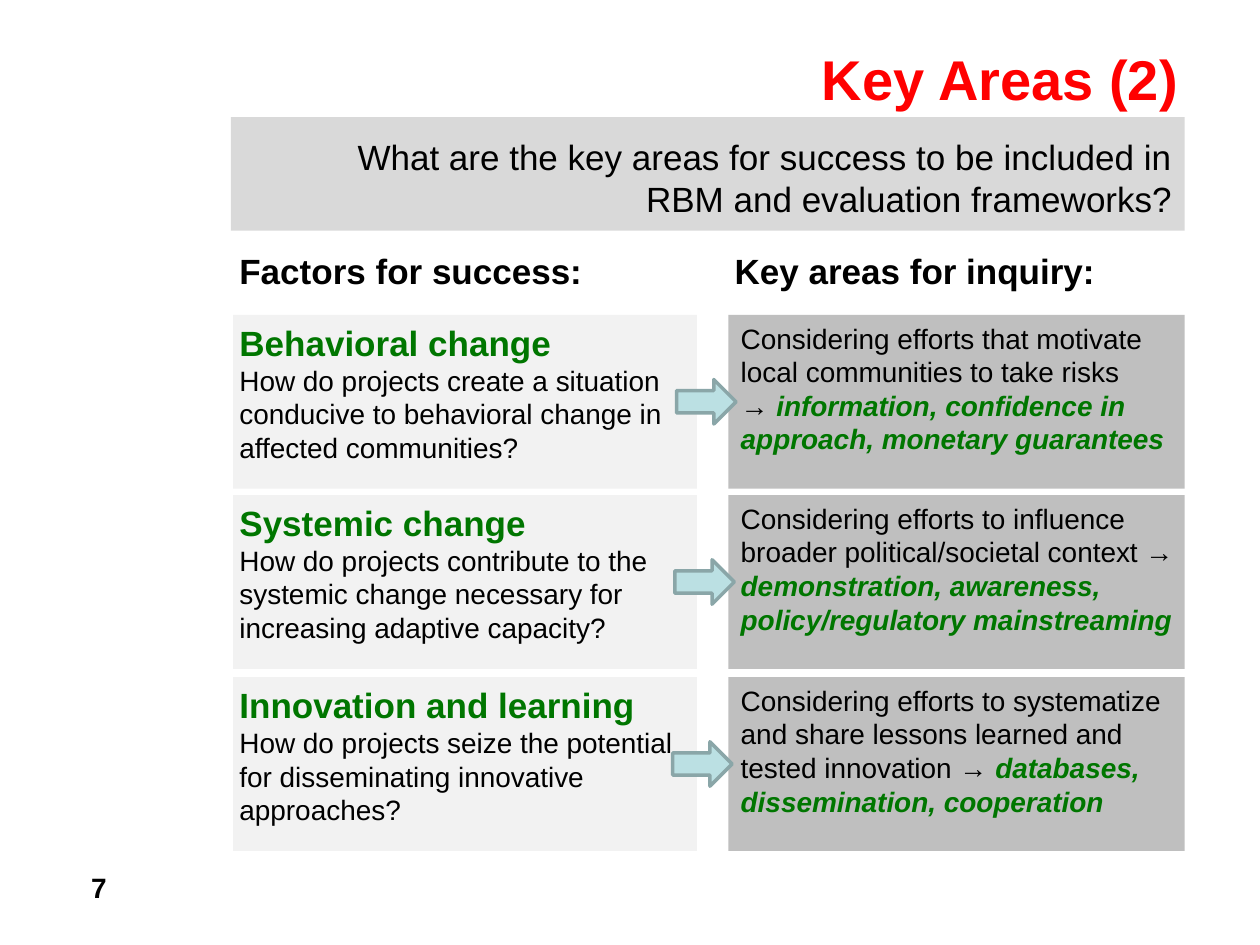
from pptx import Presentation
from pptx.dml.color import RGBColor
from pptx.enum.shapes import MSO_SHAPE
from pptx.enum.text import MSO_ANCHOR, PP_ALIGN
from pptx.util import Pt

RECTANGLE, ARROW = MSO_SHAPE.RECTANGLE, MSO_SHAPE.RIGHT_ARROW
TOP, MIDDLE = MSO_ANCHOR.TOP, MSO_ANCHOR.MIDDLE
LEFT, CENTER, RIGHT = PP_ALIGN.LEFT, PP_ALIGN.CENTER, PP_ALIGN.RIGHT

BLACK = RGBColor(0x00, 0x00, 0x00)
RED = RGBColor(0xFF, 0x00, 0x00)
GREEN = RGBColor(0x00, 0x76, 0x00)
BANNER_GRAY = RGBColor(0xD9, 0xD9, 0xD9)
FACTOR_GRAY = RGBColor(0xF2, 0xF2, 0xF2)
INQUIRY_GRAY = RGBColor(0xBF, 0xBF, 0xBF)
ARROW_FILL = RGBColor(0xBB, 0xE0, 0xE3)
ARROW_LINE = RGBColor(0x8A, 0xA6, 0xA8)

# Content
TITLE = "Key Areas (2)"
QUESTION = "What are the key areas for success to be included in RBM and evaluation frameworks?"
PAGE_NUMBER = "7"
HEADINGS = [("Factors for success:", 136.8, 260), ("Key areas for inquiry:", 419.8, 219)]

# Each row: top, arrow left, factor, question, inquiry paragraphs of (text, is highlighted)
ROWS = [
    (180, 386.6, "Behavioral change",
     "How do projects create a situation conducive to behavioral change in affected communities?",
     [[("Considering efforts that motivate local communities to take risks", False)],
      [("→ ", False), ("information, confidence in approach, monetary guarantees", True)]]),
    (283, 385.6, "Systemic change",
     "How do projects contribute to the systemic change necessary for increasing adaptive capacity?",
     [[("Considering efforts to influence broader political/societal context → ", False),
       ("demonstration, awareness, policy/regulatory mainstreaming", True)]]),
    (387, 384.4, "Innovation and learning",
     "How do projects seize the potential for disseminating innovative approaches?",
     [[("Considering efforts to systematize and share lessons learned and tested innovation → ", False),
       ("databases, dissemination, cooperation", True)]]),
]

# Layout
FACTOR_LEFT, FACTOR_WIDTH = 133.2, 265
INQUIRY_LEFT, INQUIRY_WIDTH = 416.2, 260.8
ROW_HEIGHT = 99.2
ARROW_WIDTH, ARROW_HEIGHT = 34, 25.4

deck = Presentation()
deck.slide_width, deck.slide_height = Pt(720), Pt(540)
page = deck.slides.add_slide(deck.slide_layouts[6])


def set_frame(box, insets, anchor):
    frame = box.text_frame
    frame.word_wrap = True
    frame.vertical_anchor = anchor
    (frame.margin_left, frame.margin_top,
     frame.margin_right, frame.margin_bottom) = [Pt(inset) for inset in insets]
    return frame


def add_box(left, top, width, height, insets=(7.2, 3.6, 7.2, 3.6), anchor=TOP):
    box = page.shapes.add_textbox(Pt(left), Pt(top), Pt(width), Pt(height))
    return set_frame(box, insets, anchor)


def add_shape(kind, left, top, width, height, fill):
    shape = page.shapes.add_shape(kind, Pt(left), Pt(top), Pt(width), Pt(height))
    shape.shadow.inherit = False
    shape.fill.solid()
    shape.fill.fore_color.rgb = fill
    shape.line.fill.background()
    return shape


def add_panel(left, top, width, height, fill, insets, anchor=TOP):
    return set_frame(add_shape(RECTANGLE, left, top, width, height, fill), insets, anchor)


def write(para, text, size, color=BLACK, bold=False, align=LEFT):
    para.text = text
    para.alignment = align
    font = para.font
    font.name, font.size, font.bold = "Arial", Pt(size), bold
    font.color.rgb = color


# Title, page number and banner
write(add_box(157, 16.6, 523.4, 56.2, anchor=MIDDLE).paragraphs[0],
      TITLE, 32, RED, True, RIGHT)
write(add_box(38.9, 493.9, 35.3, 28.8).paragraphs[0], PAGE_NUMBER, 16, bold=True, align=CENTER)
banner = add_panel(132, 67, 545, 64.8, BANNER_GRAY, (64.8, 7.2, 7.2, 3.6), MIDDLE)
write(banner.paragraphs[0], QUESTION, 20, align=RIGHT)

# Column headings
for text, left, width in HEADINGS:
    write(add_box(left, 142.6, width, 25.2, (0, 0, 0, 0)).paragraphs[0], text, 20, bold=True)

# Rows: factor, inquiry and the arrow between them
for top, arrow_left, factor, question, inquiry in ROWS:
    frame = add_panel(FACTOR_LEFT, top, FACTOR_WIDTH, ROW_HEIGHT, FACTOR_GRAY,
                      (3.6, 3.6, 10.8, 3.6))
    write(frame.paragraphs[0], factor, 20, GREEN, True)
    write(frame.add_paragraph(), question, 16)

    frame = add_panel(INQUIRY_LEFT, top, INQUIRY_WIDTH, ROW_HEIGHT, INQUIRY_GRAY,
                      (7.2, 3.6, 0, 3.6))
    for index, spans in enumerate(inquiry):
        para = frame.add_paragraph() if index else frame.paragraphs[0]
        write(para, "", 16)
        for text, highlighted in spans:
            span = para.add_run()
            span.text = text
            span.font.bold = span.font.italic = highlighted
            span.font.color.rgb = GREEN if highlighted else BLACK

    arrow = add_shape(ARROW, arrow_left, top + (ROW_HEIGHT - ARROW_HEIGHT) / 2,
                      ARROW_WIDTH, ARROW_HEIGHT, ARROW_FILL)
    arrow.line.color.rgb = ARROW_LINE
    arrow.line.width = Pt(2)

deck.save("out.pptx")
